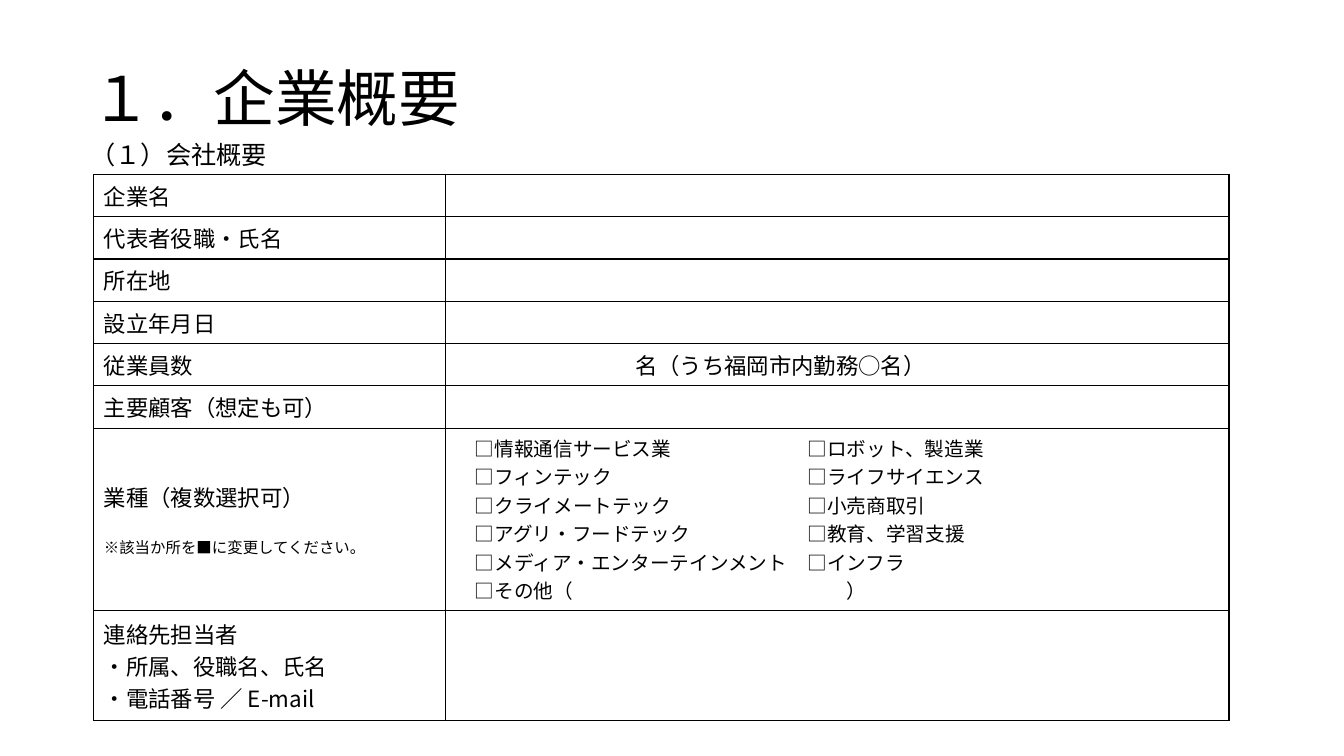
from dataclasses import dataclass

from lxml import etree
from pptx import Presentation
from pptx.dml.color import RGBColor
from pptx.enum.text import MSO_ANCHOR
from pptx.oxml.ns import qn
from pptx.util import Inches, Pt

TOP = MSO_ANCHOR.TOP
MIDDLE = MSO_ANCHOR.MIDDLE


@dataclass(frozen=True)
class Theme:
    font: str = "Noto Sans CJK JP"
    ink: str = "000000"
    title: int = 44
    head: int = 18
    body: int = 16
    list: int = 14
    note: int = 11
    rule: float = 1


THEME = Theme()
COLS = (3.49, 7.77)
ROWS = (0.42,) * 6 + (1.81, 1.09)
LABELS = (
    ("企業名",),
    ("代表者役職・氏名",),
    ("所在地",),
    ("設立年月日",),
    ("従業員数",),
    ("主要顧客（想定も可）",),
    ("業種（複数選択可）",),
    ("連絡先担当者", "・所属、役職名、氏名", "・電話番号 ／ E-mail"),
)
STAFF_ROW, FIELD_ROW = 4, 6
FIELDS = (
    ("情報通信サービス業", "ロボット、製造業"),
    ("フィンテック", "ライフサイエンス"),
    ("クライメートテック", "小売商取引"),
    ("アグリ・フードテック", "教育、学習支援"),
    ("メディア・エンターテインメント", "インフラ"),
)


def write(frame, text, size=THEME.body, first=False, line=None, before=None, tab=None):
    para = frame.paragraphs[0] if first else frame.add_paragraph()
    if line:
        para.line_spacing = line
    if before:
        para.space_before = Pt(before)
    run = para.add_run()
    run.text = text
    font = run.font
    font.size = Pt(size)
    font.name = THEME.font
    font.color.rgb = RGBColor.from_string(THEME.ink)
    east = etree.SubElement(run._r.get_or_add_rPr(), qn("a:ea"))
    east.set("typeface", THEME.font)
    if tab:
        stops = etree.SubElement(para._p.get_or_add_pPr(), qn("a:tabLst"))
        etree.SubElement(stops, qn("a:tab"), pos=str(Inches(tab)), algn="l")


def add_text(slide, text, top, height, size, anchor=TOP, line=None):
    box = slide.shapes.add_textbox(Inches(0.8), Inches(top), Inches(11.5), Inches(height))
    frame = box.text_frame
    frame.word_wrap = True
    frame.vertical_anchor = anchor
    write(frame, text, size=size, first=True, line=line)


def style_cell(cell):
    props = cell._tc.get_or_add_tcPr()
    for side in ("lnL", "lnR", "lnT", "lnB"):
        edge = etree.SubElement(props, qn(f"a:{side}"), w=str(Pt(THEME.rule)))
        fill = etree.SubElement(edge, qn("a:solidFill"))
        etree.SubElement(fill, qn("a:srgbClr"), val=THEME.ink)
    cell.fill.background()
    cell.vertical_anchor = MIDDLE


def add_grid(slide):
    shape = slide.shapes.add_table(
        len(ROWS), len(COLS), Inches(0.93), Inches(1.73),
        Inches(sum(COLS)), Inches(sum(ROWS)),
    )
    grid = shape.table
    grid.first_row = False
    grid.horz_banding = False
    for col, width in zip(grid.columns, COLS):
        col.width = Inches(width)
    for row, height in zip(grid.rows, ROWS):
        row.height = Inches(height)
    for cell in grid.iter_cells():
        style_cell(cell)
        cell.text_frame.paragraphs[0].font.size = Pt(THEME.body)
    return grid


def fill_labels(grid):
    for row, lines in enumerate(LABELS):
        frame = grid.cell(row, 0).text_frame
        for num, text in enumerate(lines):
            write(frame, text, first=num == 0)
    note = grid.cell(FIELD_ROW, 0).text_frame
    write(note, "※該当か所を■に変更してください。", size=THEME.note, before=16)


def fill_staff(grid):
    cell = grid.cell(STAFF_ROW, 1)
    cell.margin_left = Inches(1.88)
    write(cell.text_frame, "名（うち福岡市内勤務○名）", first=True)


def fill_fields(grid):
    cell = grid.cell(FIELD_ROW, 1)
    cell.vertical_anchor = TOP
    cell.margin_left = Inches(0.29)
    frame = cell.text_frame
    for num, (left, right) in enumerate(FIELDS):
        write(frame, f"□{left}\t□{right}", size=THEME.list, first=num == 0, tab=3.3)
    write(frame, "□その他（\t）", size=THEME.list, tab=3.69)


def main():
    deck = Presentation()
    deck.slide_width = Inches(13.33)
    deck.slide_height = Inches(7.5)
    slide = deck.slides.add_slide(deck.slide_layouts[6])
    add_text(slide, "１．企業概要", 0.28, 1.45, THEME.title, anchor=MIDDLE, line=0.9)
    grid = add_grid(slide)
    fill_labels(grid)
    fill_staff(grid)
    fill_fields(grid)
    add_text(slide, "（１）会社概要", 1.33, 0.4, THEME.head)
    deck.save("out.pptx")


if __name__ == "__main__":
    main()
